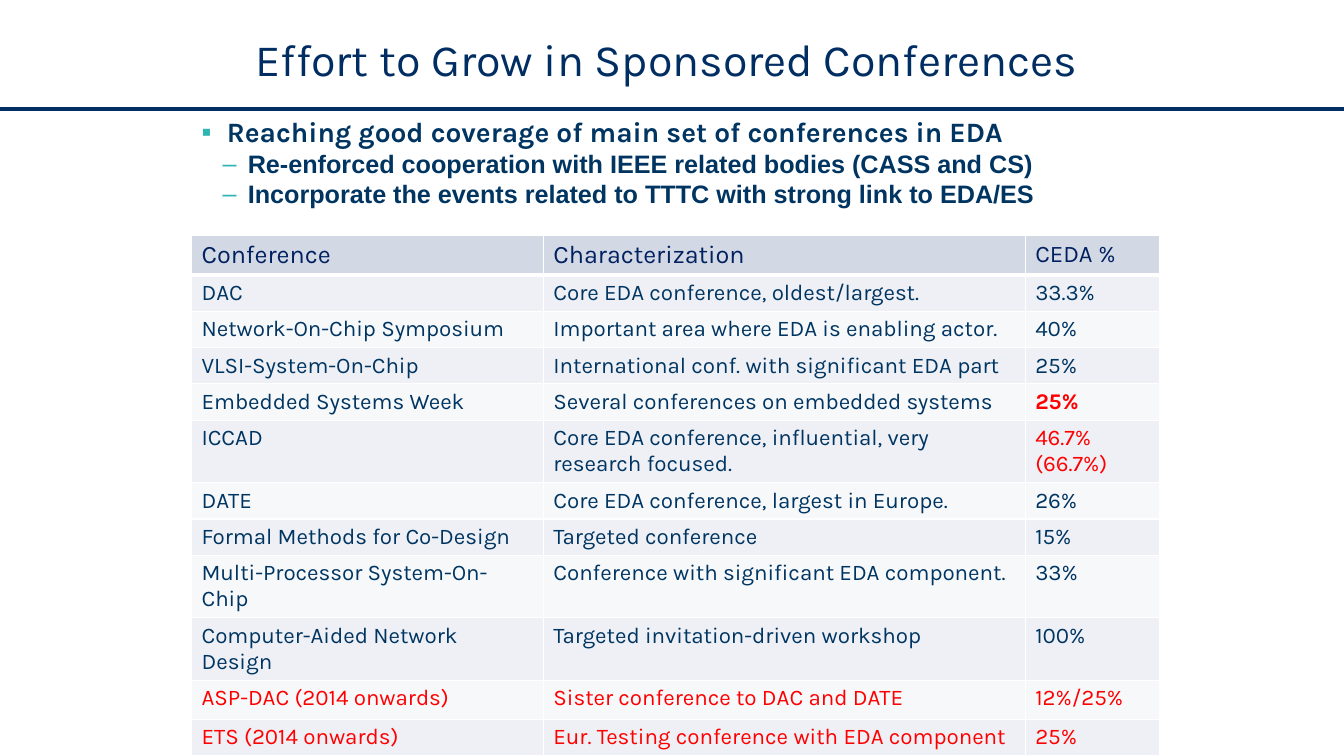
from lxml.etree import SubElement
from pptx import Presentation
from pptx.dml.color import RGBColor
from pptx.enum.shapes import MSO_CONNECTOR as Connector
from pptx.enum.text import MSO_ANCHOR as Anchor, MSO_AUTO_SIZE as AutoSize, PP_ALIGN as Align
from pptx.oxml.ns import qn
from pptx.util import Pt

NAVY, HEADER_NAVY, TEXT_BLUE = "002D62", "002060", "003562"
RED, TEAL, WHITE = "FF0000", "2DB6B3", "FFFFFF"
HEADER_FILL, BAND_FILLS = "D2D8E4", ("F7F8FA", "EEF0F5")

COLUMN_WIDTHS = (251.3, 344.2, 95.8)
HEADINGS = ("Conference", "Characterization", "CEDA %")
# Row height, conference, characterization, share, row colour, share colour, share bold
CONFERENCES = [
    (23, "DAC", "Core EDA conference, oldest/largest.", "33.3%", TEXT_BLUE, TEXT_BLUE, False),
    (23, "Network-On-Chip Symposium", "Important area where EDA is enabling actor.", "40%",
     TEXT_BLUE, TEXT_BLUE, False),
    (23, "VLSI-System-On-Chip", "International conf. with significant EDA part", "25%",
     TEXT_BLUE, TEXT_BLUE, False),
    (23, "Embedded Systems Week", "Several conferences on embedded systems", "25%",
     TEXT_BLUE, RED, True),
    (40, "ICCAD", "Core EDA conference, influential, very research focused.", "46.7%\n(66.7%)",
     TEXT_BLUE, RED, False),
    (23, "DATE", "Core EDA conference, largest in Europe.", "26%", TEXT_BLUE, TEXT_BLUE, False),
    (23, "Formal Methods for Co-Design", "Targeted conference", "15%",
     TEXT_BLUE, TEXT_BLUE, False),
    (35, "Multi-Processor System-On-Chip", "Conference with significant EDA component.", "33%",
     TEXT_BLUE, TEXT_BLUE, False),
    (35, "Computer-Aided Network Design", "Targeted invitation-driven workshop", "100%",
     TEXT_BLUE, TEXT_BLUE, False),
    (28, "ASP-DAC (2014 onwards)", "Sister conference to DAC and DATE", "12%/25%",
     RED, RED, False),
    (23, "ETS (2014 onwards)", "Eur. Testing conference with EDA component", "25%",
     RED, RED, False),
]
# Text, level, indent, bullet, size, font
POINTS = [
    ("Reaching good coverage of main set of conferences in EDA", 0, 18, "▪", 20, "Karla"),
    ("Re-enforced cooperation with IEEE related bodies (CASS and CS)", 1, 33, "–", 18, "Arial"),
    ("Incorporate the events related to TTTC with strong link to EDA/ES", 1, 33, "–", 18, "Arial"),
]


def rgb(color):
    return RGBColor.from_string(color)


def write(paragraph, text, size=16, color=TEXT_BLUE, font="Karla", bold=False, align=Align.LEFT):
    paragraph.alignment = align
    paragraph.space_before = Pt(0)
    run = paragraph.add_run()
    run.text = text
    run.font.name, run.font.size, run.font.bold = font, Pt(size), bold
    run.font.color.rgb = rgb(color)


def place(shape, left, top, width, height):
    shape.left, shape.top, shape.width, shape.height = Pt(left), Pt(top), Pt(width), Pt(height)


def add_bullet(paragraph, char, color, indent):
    props = paragraph._p.get_or_add_pPr()
    props.set("marL", str(Pt(indent)))
    props.set("indent", str(Pt(-18)))
    SubElement(SubElement(props, qn("a:buClr")), qn("a:srgbClr"), val=color)
    SubElement(props, qn("a:buFont"), typeface="Arial")
    SubElement(props, qn("a:buChar"), char=char)


def add_borders(cell, bottom_width):
    props = cell._tc.get_or_add_tcPr()
    for side, width in (("L", 1), ("R", 1), ("T", 1), ("B", bottom_width)):
        line = SubElement(props, qn(f"a:ln{side}"), w=str(Pt(width)))
        SubElement(SubElement(line, qn("a:solidFill")), qn("a:srgbClr"), val=WHITE)


def fill_cell(cell, text, fill, bottom_width=1, **text_format):
    add_borders(cell, bottom_width)
    cell.fill.solid()
    cell.fill.fore_color.rgb = rgb(fill)
    frame = cell.text_frame
    for index, line in enumerate(text.split("\n")):
        paragraph = frame.add_paragraph() if index else frame.paragraphs[0]
        write(paragraph, line, **text_format)


def add_title(slide, text):
    title = slide.shapes.title
    place(title, 64, 6, 825, 72)
    title.text_frame.vertical_anchor = Anchor.MIDDLE
    write(title.text_frame.paragraphs[0], text, size=32, color=NAVY, align=Align.CENTER)


def add_rule(slide, y, width):
    rule = slide.shapes.add_connector(Connector.STRAIGHT, Pt(0), Pt(y), Pt(width), Pt(y))
    rule.line.color.rgb = rgb(NAVY)
    rule.line.width = Pt(3)
    SubElement(rule._element.spPr, qn("a:effectLst"))


def add_points(slide):
    body = slide.placeholders[1]
    place(body, 136.8, 78.5, 697, 99)
    frame = body.text_frame
    frame.auto_size = AutoSize.NONE
    frame.vertical_anchor = Anchor.TOP
    for index, (text, level, indent, char, size, font) in enumerate(POINTS):
        paragraph = frame.add_paragraph() if index else frame.paragraphs[0]
        paragraph.level = level
        add_bullet(paragraph, char, TEAL, indent)
        write(paragraph, text, size=size, font=font, bold=True)


def add_conference_table(slide):
    frame = slide.shapes.add_table(len(CONFERENCES) + 1, len(HEADINGS), Pt(136.8), Pt(168),
                                   Pt(sum(COLUMN_WIDTHS)), Pt(323))
    table = frame.table
    for column, width in zip(table.columns, COLUMN_WIDTHS):
        column.width = Pt(width)

    # Header row
    table.rows[0].height = Pt(24)
    for column, (heading, size) in enumerate(zip(HEADINGS, (18, 18, 17))):
        fill_cell(table.cell(0, column), heading, HEADER_FILL, bottom_width=3,
                  size=size, color=HEADER_NAVY)

    # Conference rows
    for row, (height, name, about, share, color, share_color, bold) in enumerate(CONFERENCES, 1):
        table.rows[row].height = Pt(height)
        fill = BAND_FILLS[row % 2]
        fill_cell(table.cell(row, 0), name, fill, color=color)
        fill_cell(table.cell(row, 1), about, fill, color=color)
        fill_cell(table.cell(row, 2), share, fill, color=share_color, bold=bold)


def main():
    deck = Presentation()
    deck.slide_width, deck.slide_height = Pt(960), Pt(540)
    slide = deck.slides.add_slide(deck.slide_layouts[1])
    add_rule(slide, 78, 960)
    add_title(slide, "Effort to Grow in Sponsored Conferences")
    add_conference_table(slide)
    add_points(slide)
    deck.save("out.pptx")


if __name__ == "__main__":
    main()
